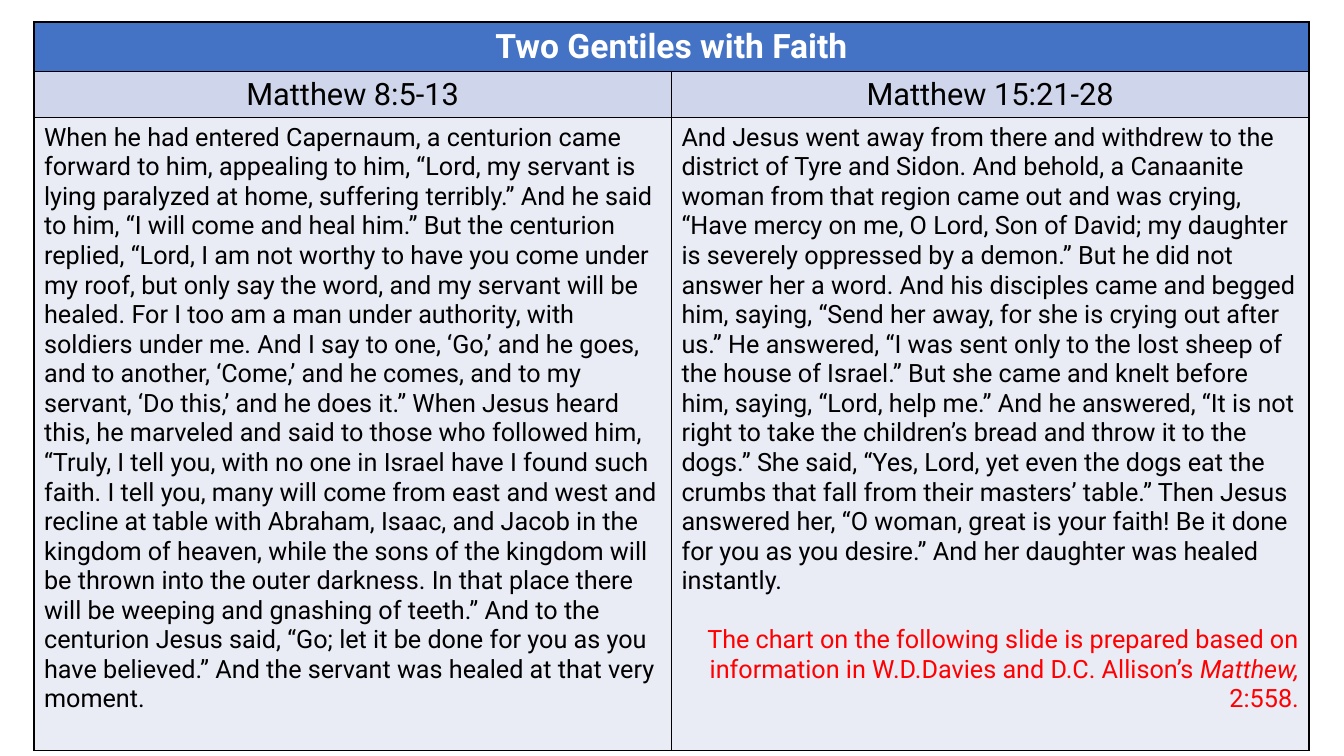
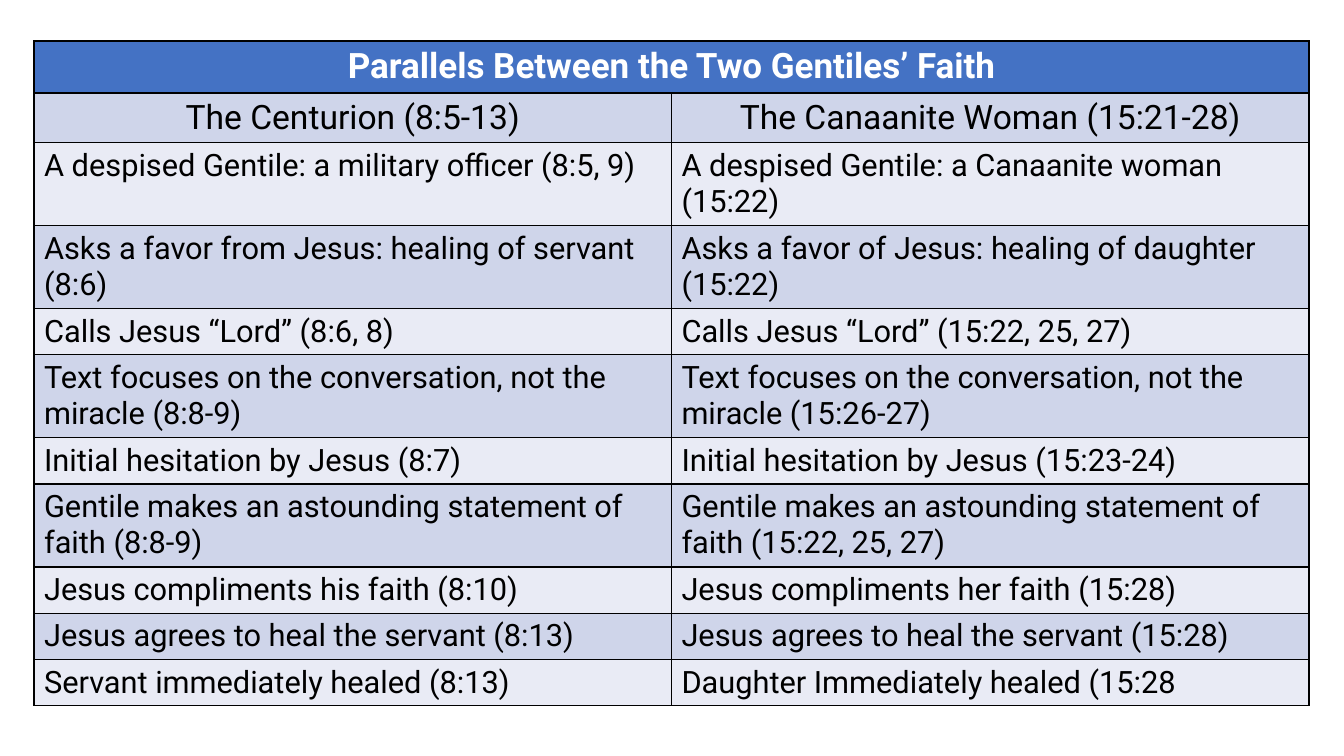
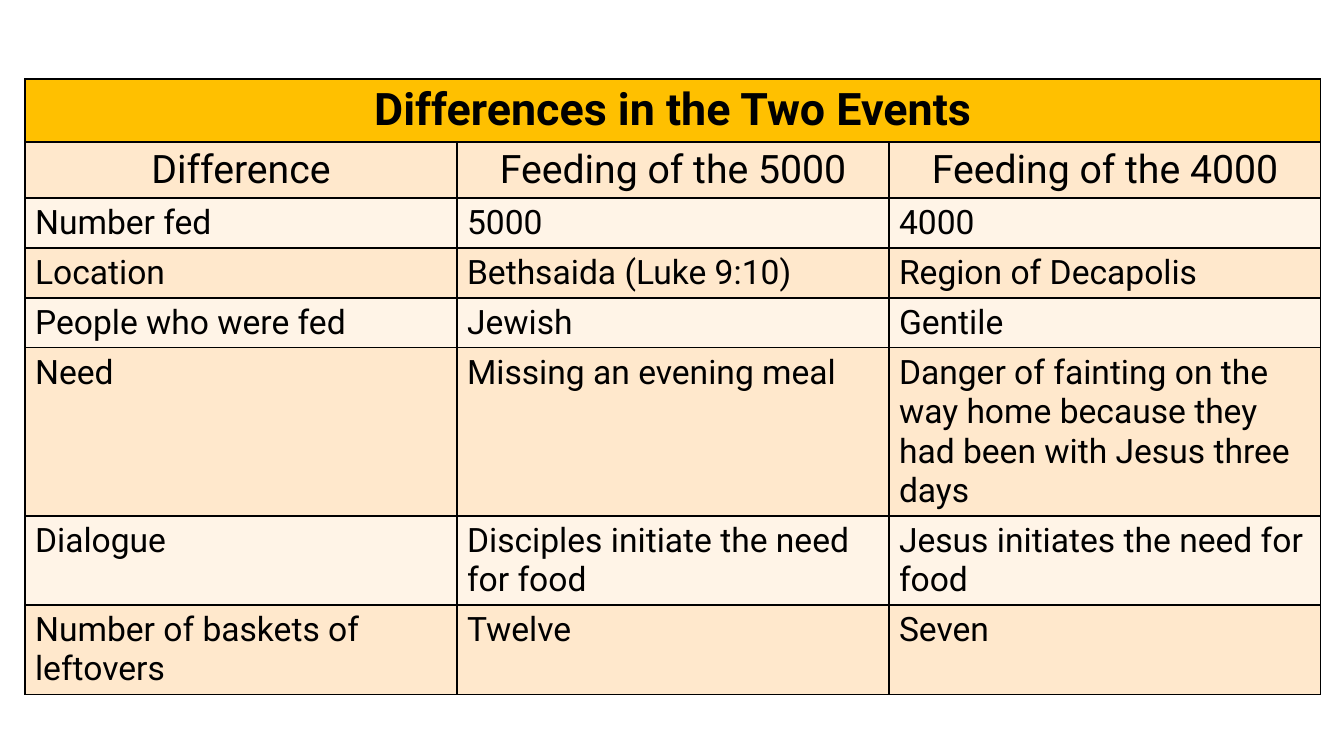
from dataclasses import dataclass

from lxml import etree
from pptx import Presentation
from pptx import util as u
from pptx.dml.color import RGBColor
from pptx.enum import text
from pptx.oxml import ns

SLIDE_WIDTH, SLIDE_HEIGHT = 1344, 756
FONT = "Roboto"
BLACK = "000000"
RED = "FF0000"


@dataclass
class Palette:
    banner: str
    banner_text: str
    dark_band: str
    light_band: str


BLUE = Palette("4472C4", "FFFFFF", "CFD5EA", "E9EBF5")
GOLD = Palette("FFC000", BLACK, "FFE8CC", "FFF4E7")

CENTURION_PASSAGE = (
    "When he had entered Capernaum, a centurion came forward to him, appealing to him, "
    "“Lord, my servant is lying paralyzed at home, suffering terribly.”",
    "And he said to him, “I will come and heal him.”",
    "But the centurion replied, “Lord, I am not worthy to have you come under my roof, "
    "but only say the word, and my servant will be healed.",
    "For I too am a man under authority, with soldiers under me.",
    "And I say to one, ‘Go,’ and he goes, and to another, ‘Come,’ and he comes, "
    "and to my servant, ‘Do this,’ and he does it.”",
    "When Jesus heard this, he marveled and said to those who followed him, "
    "“Truly, I tell you, with no one in Israel have I found such faith.",
    "I tell you, many will come from east and west and recline at table with Abraham, "
    "Isaac, and Jacob in the kingdom of heaven, while the sons of the kingdom will be "
    "thrown into the outer darkness.",
    "In that place there will be weeping and gnashing of teeth.”",
    "And to the centurion Jesus said, “Go; let it be done for you as you have believed.”",
    "And the servant was healed at that very moment.",
)
CANAANITE_PASSAGE = (
    "And Jesus went away from there and withdrew to the district of Tyre and Sidon.",
    "And behold, a Canaanite woman from that region came out and was crying, “Have mercy "
    "on me, O Lord, Son of David; my daughter is severely oppressed by a demon.”",
    "But he did not answer her a word.",
    "And his disciples came and begged him, saying, “Send her away, for she is crying out "
    "after us.”",
    "He answered, “I was sent only to the lost sheep of the house of Israel.”",
    "But she came and knelt before him, saying, “Lord, help me.”",
    "And he answered, “It is not right to take the children’s bread and throw it to the "
    "dogs.”",
    "She said, “Yes, Lord, yet even the dogs eat the crumbs that fall from their masters’ "
    "table.”",
    "Then Jesus answered her, “O woman, great is your faith! Be it done for you as you "
    "desire.”",
    "And her daughter was healed instantly.",
)
CITATION = (
    ("The chart on the following slide is prepared based on information in "
     "W.D.Davies and D.C. Allison’s ", False),
    ("Matthew, ", True),
    ("2:558.", False),
)
PARALLELS = (
    ("The Centurion (8:5-13)", "The Canaanite Woman (15:21-28)"),
    ("A despised Gentile: a military officer (8:5, 9)",
     "A despised Gentile: a Canaanite woman (15:22)"),
    ("Asks a favor from Jesus: healing of servant (8:6)",
     "Asks a favor of Jesus: healing of daughter (15:22)"),
    ("Calls Jesus “Lord” (8:6, 8)", "Calls Jesus “Lord” (15:22, 25, 27)"),
    ("Text focuses on the conversation, not the miracle (8:8-9)",
     "Text focuses on the conversation, not the miracle (15:26-27)"),
    ("Initial hesitation by Jesus (8:7)", "Initial hesitation by Jesus (15:23-24)"),
    ("Gentile makes an astounding statement of faith (8:8-9)",
     "Gentile makes an astounding statement of faith (15:22, 25, 27)"),
    ("Jesus compliments his faith (8:10)", "Jesus compliments her faith (15:28)"),
    ("Jesus agrees to heal the servant (8:13)", "Jesus agrees to heal the servant (15:28)"),
    ("Servant immediately healed (8:13)", "Daughter Immediately healed (15:28"),
)
DIFFERENCES = (
    ("Difference", "Feeding of the 5000", "Feeding of the 4000"),
    ("Number fed", "5000", "4000"),
    ("Location", "Bethsaida (Luke 9:10)", "Region of Decapolis"),
    ("People who were fed", "Jewish", "Gentile"),
    ("Need", "Missing an evening meal",
     "Danger of fainting on the way home because they had been with Jesus three days"),
    ("Dialogue", "Disciples initiate the need for food", "Jesus initiates the need for food"),
    ("Number of baskets of leftovers", "Twelve", "Seven"),
)


def px(length):
    return u.Emu(round(length * 12192000 / SLIDE_WIDTH))


def rgb(value):
    return RGBColor.from_string(value)


def style_run(run, size, color, bold=False, italic=False):
    run.font.name = FONT
    run.font.size = u.Pt(size)
    run.font.color.rgb = rgb(color)
    run.font.bold = bold
    run.font.italic = italic


def outline_cell(cell):
    properties = cell._tc.get_or_add_tcPr()
    for side in ("lnL", "lnR", "lnT", "lnB"):
        edge = etree.SubElement(properties, ns.qn(f"a:{side}"), w=str(u.Pt(1)))
        paint = etree.SubElement(edge, ns.qn("a:solidFill"))
        etree.SubElement(paint, ns.qn("a:srgbClr"), val=BLACK)


def fill_cell(cell, wording, fill, size, color=BLACK, bold=False, centred=False):
    cell.text_frame.text = wording
    paragraph = cell.text_frame.paragraphs[0]
    if centred:
        paragraph.alignment = text.PP_ALIGN.CENTER
    for run in paragraph.runs:
        style_run(run, size, color, bold)
    outline_cell(cell)
    cell.fill.solid()
    cell.fill.fore_color.rgb = rgb(fill)


def add_comparison(slide, box, heights, palette, sizes, banner, rows):
    left, top, width = box
    banner_size, heading_size, body_size = sizes
    columns = len(rows[0])
    grid = slide.shapes.add_table(
        len(heights), columns, px(left), px(top), px(width), px(sum(heights))
    ).table
    for column in grid.columns:
        column.width = px(width / columns)
    for row, height in zip(grid.rows, heights):
        row.height = px(height)
    for number, wordings in enumerate([(banner,) + ("",) * (columns - 1), *rows]):
        for column, wording in enumerate(wordings):
            cell = grid.cell(number, column)
            if number == 0:
                fill_cell(cell, wording, palette.banner, banner_size,
                          palette.banner_text, bold=True, centred=True)
            else:
                fill = palette.dark_band if number % 2 else palette.light_band
                size = heading_size if number == 1 else body_size
                fill_cell(cell, wording, fill, size, centred=number == 1)
    grid.cell(0, 0).merge(grid.cell(0, columns - 1))
    return grid


def add_citation(cell, size):
    paragraph = cell.text_frame.add_paragraph()
    paragraph.alignment = text.PP_ALIGN.RIGHT
    paragraph.space_before = u.Pt(21)
    for wording, italic in CITATION:
        run = paragraph.add_run()
        run.text = wording
        style_run(run, size, RED, italic=italic)


def passages_slide(slide):
    rows = (("Matthew 8:5-13", "Matthew 15:21-28"),
            (" ".join(CENTURION_PASSAGE), " ".join(CANAANITE_PASSAGE)))
    grid = add_comparison(slide, (34, 22, 1275), (49, 46, 633), BLUE, (24, 22, 18),
                          "Two Gentiles with Faith", rows)
    add_citation(grid.cell(2, 1), 18)


def parallels_slide(slide):
    one_line, two_lines = 46, 83
    heights = (52, 48, two_lines, two_lines, one_line, two_lines, one_line, two_lines,
               one_line, one_line, one_line)
    add_comparison(slide, (34, 41, 1275), heights, BLUE, (25, 24, 22),
                   "Parallels Between the Two Gentiles’ Faith", PARALLELS)


def differences_slide(slide):
    one_line, two_lines, four_lines = 50, 89, 168
    heights = (63, 56, one_line, one_line, one_line, four_lines, two_lines, two_lines)
    add_comparison(slide, (25, 79, 1296), heights, GOLD, (32, 28, 24),
                   "Differences in the Two Events", DIFFERENCES)


def main():
    deck = Presentation()
    deck.slide_width, deck.slide_height = px(SLIDE_WIDTH), px(SLIDE_HEIGHT)
    for build in (passages_slide, parallels_slide, differences_slide):
        build(deck.slides.add_slide(deck.slide_layouts[6]))
    deck.save("out.pptx")


if __name__ == "__main__":
    main()
